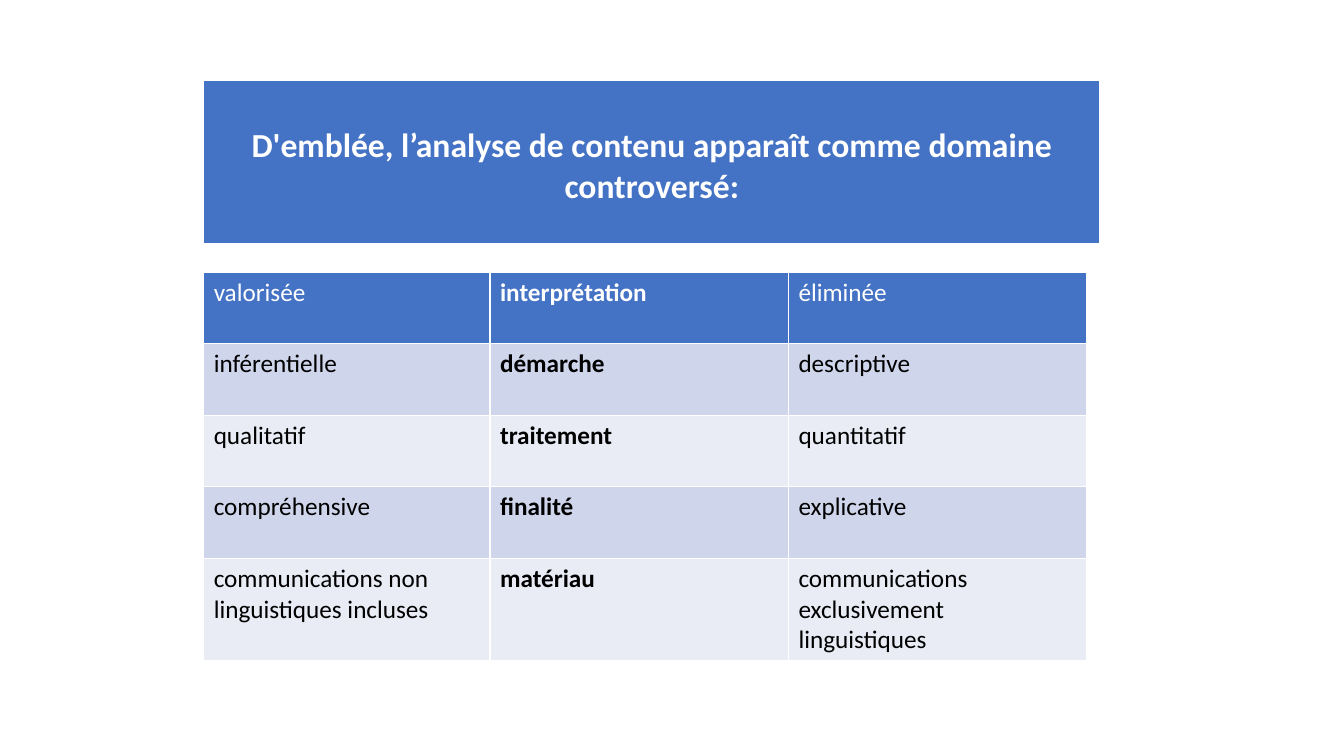
from pptx import Presentation
from pptx.dml.color import RGBColor
from pptx.enum.text import PP_ALIGN as Align
from pptx.oxml import parse_xml
from pptx.oxml.ns import nsdecls
from pptx.util import Inches, Pt

# Content
HEADING = "D'emblée, l’analyse de contenu apparaît comme domaine controversé:"
ROWS = [
    ("valorisée", "interprétation", "éliminée"),
    ("inférentielle", "démarche", "descriptive"),
    ("qualitatif", "traitement", "quantitatif"),
    ("compréhensive", "finalité", "explicative"),
    ("communications non linguistiques incluses", "matériau",
     "communications exclusivement linguistiques"),
]

# Look and measures
FONT = "Calibri"
BLUE, WHITE, BLACK = "4472C4", "FFFFFF", "000000"
BANDS = ("E9EBF5", "CFD5EA")
LEFT = 2.02
COLUMN_WIDTHS = (2.84, 2.96, 2.96)
ROW_HEIGHTS = (0.71, 0.71, 0.71, 0.71, 1.01)


def color(value):
    return RGBColor.from_string(value)


def add_grid(page, top, widths, heights):
    frame = page.shapes.add_table(
        len(heights), len(widths), Inches(LEFT), Inches(top),
        Inches(sum(widths)), Inches(sum(heights)))
    grid = frame.table
    for column, width in zip(grid.columns, widths):
        column.width = Inches(width)
    for row, height in zip(grid.rows, heights):
        row.height = Inches(height)
    return grid


def fill_cell(cell, text, size, bold, ink, fill):
    # White borders come before the fill in the cell properties
    properties = cell._tc.get_or_add_tcPr()
    for side in ("lnL", "lnR", "lnT", "lnB"):
        properties.append(parse_xml(
            f'<a:{side} {nsdecls("a")} w="{Pt(1)}"><a:solidFill>'
            f'<a:srgbClr val="{WHITE}"/></a:solidFill></a:{side}>'))
    cell.fill.solid()
    cell.fill.fore_color.rgb = color(fill)
    cell.text_frame.text = text
    font = cell.text_frame.paragraphs[0].runs[0].font
    font.name, font.size, font.bold = FONT, Pt(size), bold
    font.color.rgb = color(ink)


deck = Presentation()
deck.slide_width, deck.slide_height = Inches(13.33), Inches(7.5)
page = deck.slides.add_slide(deck.slide_layouts[6])

# Heading banner
banner = add_grid(page, 0.8, (8.89,), (1.62,)).cell(0, 0)
fill_cell(banner, HEADING, 24, True, WHITE, BLUE)
banner.margin_top = Inches(0.45)
banner.text_frame.paragraphs[0].alignment = Align.CENTER

# Comparison table: blue header, banded rows, bold middle column
comparison = add_grid(page, 2.7, COLUMN_WIDTHS, ROW_HEIGHTS)
for row_index, row in enumerate(ROWS):
    header = row_index == 0
    fill = BLUE if header else BANDS[row_index % 2]
    for column_index, text in enumerate(row):
        fill_cell(comparison.cell(row_index, column_index), text, 18,
                  column_index == 1, WHITE if header else BLACK, fill)

deck.save("out.pptx")
